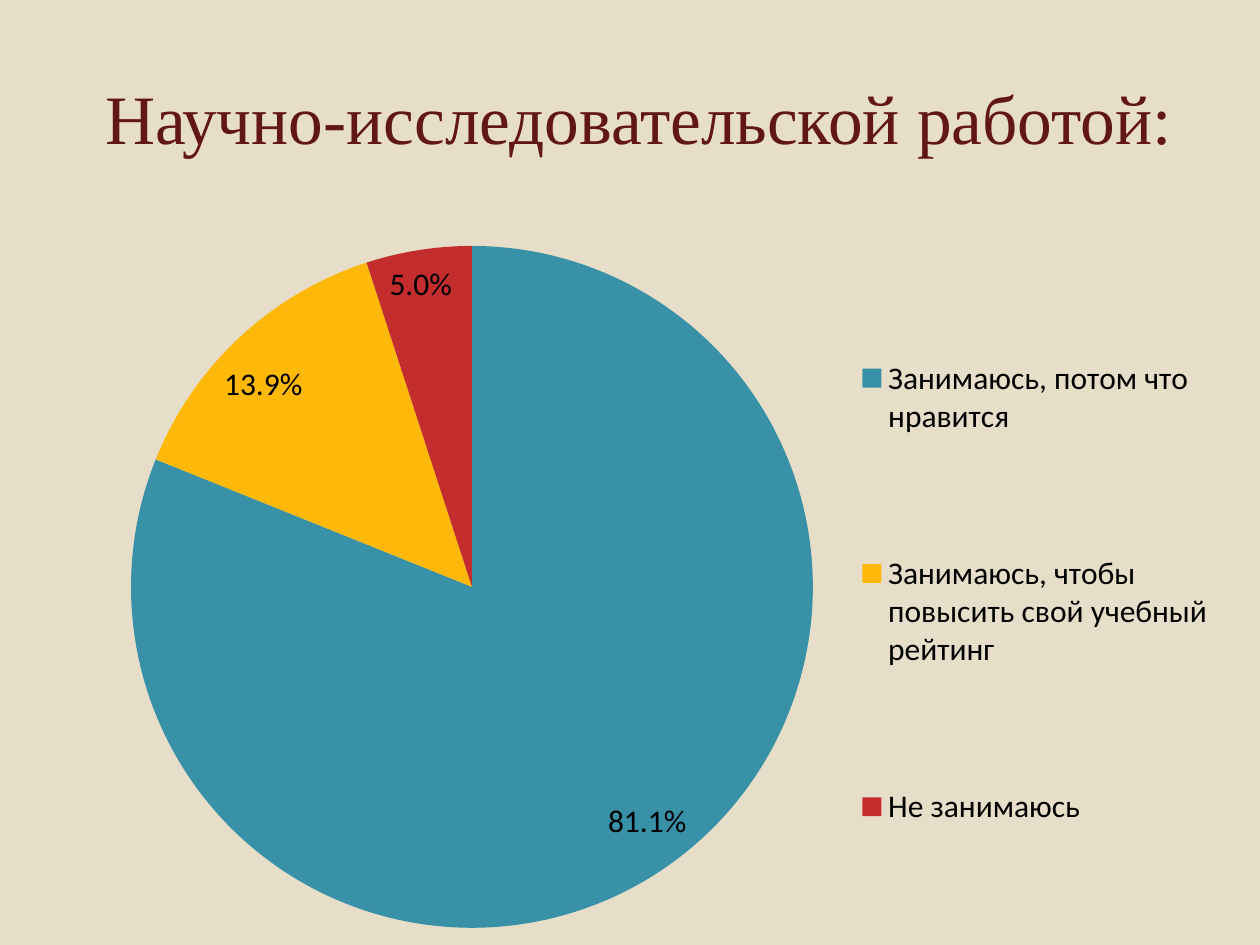
from lxml.etree import SubElement
from pptx import Presentation
from pptx.chart.data import CategoryChartData
from pptx.dml.color import RGBColor
from pptx.enum.chart import XL_CHART_TYPE as ChartType
from pptx.enum.chart import XL_LABEL_POSITION as LabelPosition
from pptx.enum.chart import XL_LEGEND_POSITION as LegendPosition
from pptx.enum.text import MSO_ANCHOR as Anchor
from pptx.enum.text import PP_ALIGN as Align
from pptx.oxml.ns import qn
from pptx.util import Pt

PX = 914400 // 126
CHART_LEFT, CHART_TOP, CHART_WIDTH, CHART_HEIGHT = 84, 185, 1150, 760


def color(value):
    return RGBColor.from_string(value)


def place_in_chart(layout, left, top, width, height, inner=False):
    """Fix a chart part at a slide position given in px."""
    manual = SubElement(layout, qn("c:manualLayout"))
    settings = {"layoutTarget": "inner"} if inner else {}
    settings |= {
        "xMode": "edge",
        "yMode": "edge",
        "x": round((left - CHART_LEFT) / CHART_WIDTH, 4),
        "y": round((top - CHART_TOP) / CHART_HEIGHT, 4),
        "w": round(width / CHART_WIDTH, 4),
        "h": round(height / CHART_HEIGHT, 4),
    }
    for name, value in settings.items():
        SubElement(manual, qn(f"c:{name}")).set("val", str(value))


deck = Presentation()
deck.slide_width, deck.slide_height = 1260 * PX, 945 * PX
page = deck.slides.add_slide(deck.slide_layouts[5])
page.background.fill.solid()
page.background.fill.fore_color.rgb = color("E7DEC9")

# Title
title = page.shapes.title
title.left, title.top, title.width, title.height = [n * PX for n in (63, 38, 1134, 157)]
title.text_frame.vertical_anchor = Anchor.MIDDLE
para = title.text_frame.paragraphs[0]
para.alignment = Align.CENTER
span = para.add_run()
span.text = " Научно-исследовательской работой:"
span.font.name, span.font.size = "Times New Roman", Pt(39.6)
span.font.color.rgb = color("621717")

# Pie chart
answers = [
    ("Занимаюсь, потом что нравится", 81.1, "3891A7"),
    ("Занимаюсь, чтобы повысить свой учебный рейтинг", 13.9, "FEB80A"),
    ("Не занимаюсь ", 5, "C32D2E"),
]
data = CategoryChartData()
data.categories = [label for label, _, _ in answers]
data.add_series("Series 1", [share for _, share, _ in answers])
frame = page.shapes.add_chart(
    ChartType.PIE, CHART_LEFT * PX, CHART_TOP * PX, CHART_WIDTH * PX, CHART_HEIGHT * PX, data
)
chart = frame.chart
chart.has_title = False
chart.font.name, chart.font.size = "Calibri", Pt(18)
chart.font.color.rgb = color("000000")

# Slices and percent labels
plot = chart.plots[0]
plot.vary_by_categories = True
for index, (_, _, fill) in enumerate(answers):
    slice_format = plot.series[0].points[index].format
    slice_format.fill.solid()
    slice_format.fill.fore_color.rgb = color(fill)
    slice_format.line.fill.background()
plot.has_data_labels = True
labels = plot.data_labels
labels.show_percentage, labels.show_value = True, False
labels.number_format, labels.number_format_is_linked = "0.0%", False
labels.position = LabelPosition.BEST_FIT

# Legend
chart.has_legend = True
legend = chart.legend
legend.position = LegendPosition.RIGHT
legend.include_in_layout = False

# Positions of the pie and the legend
plot_area = plot._element.getparent()
plot_layout = plot_area.find(qn("c:layout"))
if plot_layout is None:
    plot_layout = SubElement(plot_area, qn("c:layout"))
    plot_area.insert(0, plot_layout)
place_in_chart(plot_layout, 131, 246, 682, 682, inner=True)
legend_layout = legend._element.find(qn("c:layout"))
if legend_layout is None:
    legend_layout = SubElement(legend._element, qn("c:layout"))
    legend._element.find(qn("c:legendPos")).addnext(legend_layout)
place_in_chart(legend_layout, 850, 240, 370, 706)

deck.save("out.pptx")
